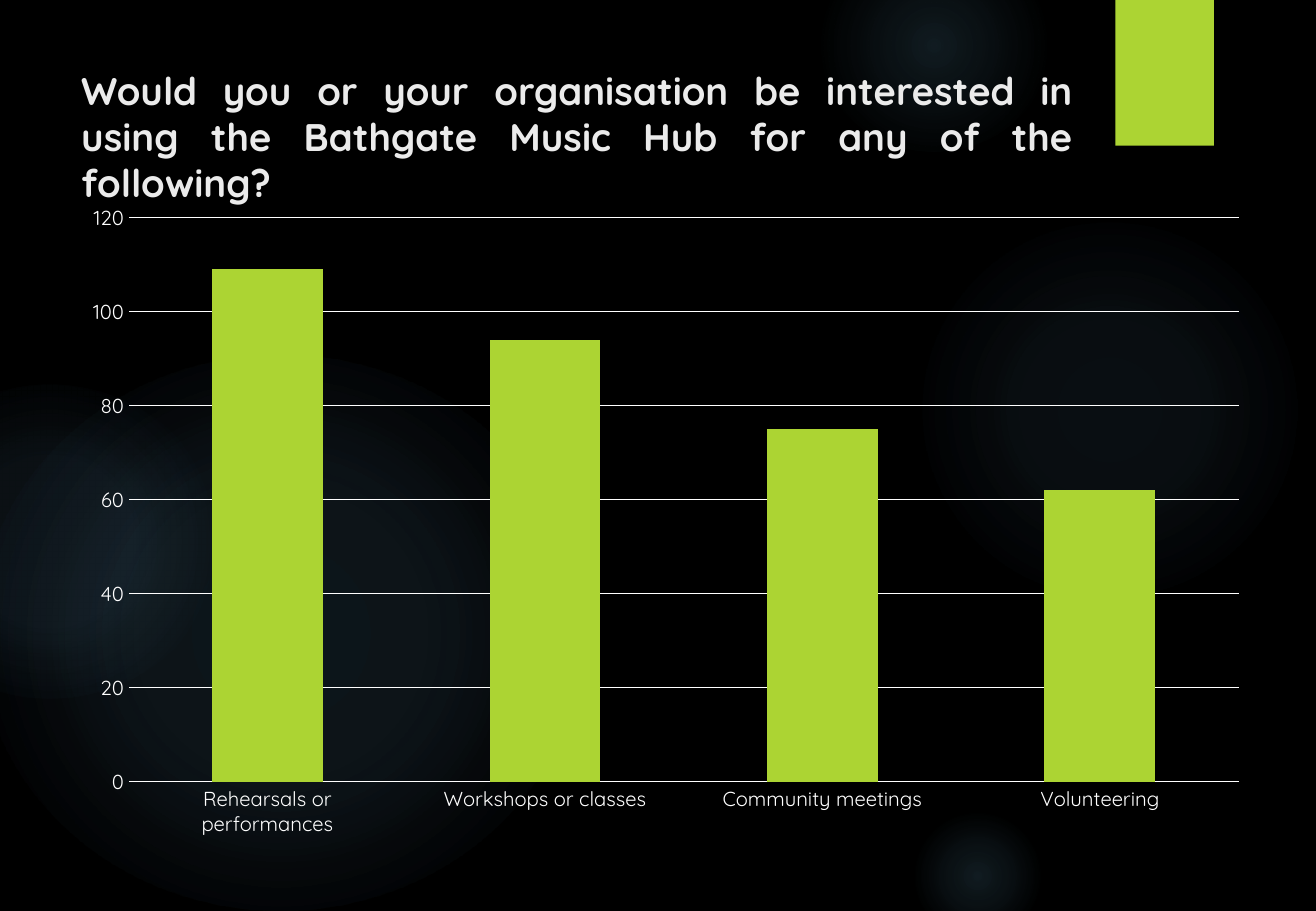
import pptx
import pptx.chart.data
import pptx.dml.color
import pptx.enum.chart
import pptx.enum.shapes
import pptx.enum.text
import pptx.oxml
import pptx.oxml.ns
import pptx.util

PX = 9144  # EMU per px, 100 px to the inch
FONT = "Quicksand"
COLORS = {"back": "000000", "glow": "7AC4F0", "accent": "ACD433",
          "title": "EBEBEB", "chart": "FFFFFF"}


def rgb(name):
    return pptx.dml.color.RGBColor.from_string(COLORS[name])


def add_shape(kind, *box):
    s = slide.shapes.add_shape(kind, *[v * PX for v in box])
    s.shadow.inherit = False
    s.line.fill.background()
    return s


prs = pptx.Presentation()
prs.slide_width, prs.slide_height = 1083 * PX, 750 * PX
slide = prs.slides.add_slide(prs.slide_layouts[6])
slide.background.fill.solid()
slide.background.fill.fore_color.rgb = rgb("back")

# Background glows: box, then (position %, opacity %) stops from the centre
glows = [
    ((746, 183, 334, 308), ((0, 7), (36, 6), (69, 0))),
    ((674, -50, 190, 175), ((0, 14), (36, 7), (73, 0))),
    ((746, 667, 117, 108), ((0, 14), (36, 7), (66, 0))),
    ((-18, 292, 497, 458), ((0, 11), (36, 10), (75, 0))),
    ((-99, 317, 280, 258), ((0, 8), (36, 8), (72, 0))),
]
for box, stops in glows:
    s = add_shape(pptx.enum.shapes.MSO_SHAPE.OVAL, *box)
    gs = "".join(
        f'<a:gs pos="{pos * 1000}"><a:srgbClr val="{COLORS["glow"]}">'
        f'<a:alpha val="{alpha * 1000}"/></a:srgbClr></a:gs>'
        for pos, alpha in stops)
    grad = pptx.oxml.parse_xml(
        f'<a:gradFill {pptx.oxml.ns.nsdecls("a")} rotWithShape="1"><a:gsLst>{gs}</a:gsLst>'
        '<a:path path="circle"><a:fillToRect l="50000" t="50000" r="50000" b="50000"/>'
        '</a:path></a:gradFill>')
    s._element.spPr.find(pptx.oxml.ns.qn("a:prstGeom")).addnext(grad)

# Green tab at the top
s = add_shape(pptx.enum.shapes.MSO_SHAPE.RECTANGLE, 918, 0, 81, 120)
s.fill.solid()
s.fill.fore_color.rgb = rgb("accent")

# Title
tf = slide.shapes.add_textbox(57 * PX, 50 * PX, 836 * PX, 109 * PX).text_frame
tf.word_wrap = True
p = tf.paragraphs[0]
p.text = ("Would you or your organisation be interested in using "
          "the Bathgate Music Hub for any of the following?")
p.alignment = pptx.enum.text.PP_ALIGN.JUSTIFY
p.font.name = FONT
p.font.size = pptx.util.Pt(22.8)
p.font.bold = True
p.font.color.rgb = rgb("title")

# Column chart
data = pptx.chart.data.CategoryChartData()
data.categories = ["Rehearsals or performances", "Workshops or classes",
                   "Community meetings", "Volunteering"]
data.add_series("Series 1", (109, 94, 75, 62))
chart = slide.shapes.add_chart(
    pptx.enum.chart.XL_CHART_TYPE.COLUMN_CLUSTERED,
    57 * PX, 158 * PX, 982 * PX, 542 * PX, data).chart
chart.has_title = False
chart.has_legend = False
chart.font.name = FONT
chart.font.size = pptx.util.Pt(12)
chart.font.color.rgb = rgb("chart")

plot = chart.plots[0]
plot.gap_width = 150
plot.vary_by_categories = False
plot.series[0].format.fill.solid()
plot.series[0].format.fill.fore_color.rgb = rgb("accent")

for axis in (chart.category_axis, chart.value_axis):
    axis.major_tick_mark = pptx.enum.chart.XL_TICK_MARK.NONE
    axis.minor_tick_mark = pptx.enum.chart.XL_TICK_MARK.NONE
    axis.format.line.fill.background()
axis = chart.value_axis
axis.minimum_scale, axis.maximum_scale, axis.major_unit = 0, 120, 20
axis.has_major_gridlines = True
axis.major_gridlines.format.line.color.rgb = rgb("chart")
axis.major_gridlines.format.line.width = pptx.util.Pt(0.75)

prs.save("out.pptx")
